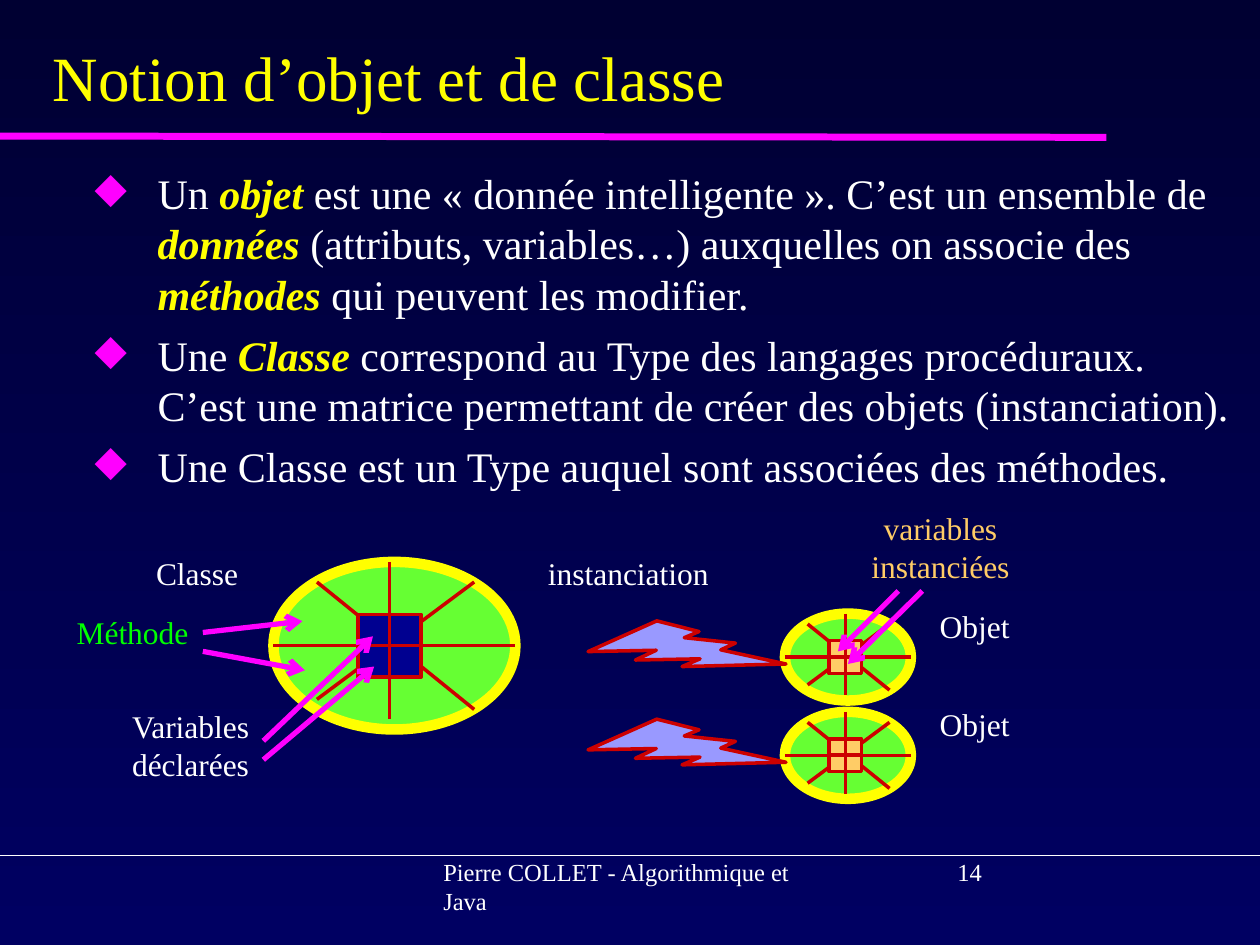
from pptx import Presentation
from pptx.dml.color import RGBColor
from pptx.enum.shapes import MSO_CONNECTOR, MSO_SHAPE
from pptx.enum.text import MSO_ANCHOR, PP_ALIGN
from pptx.oxml.ns import qn
from pptx.util import Inches, Pt
from lxml.etree import SubElement

WHITE, YELLOW, PINK, RED = "FFFFFF", "FFFF00", "FF00FF", "CC0000"
GREEN, LIME, NAVY, PEACH, LILAC = "66FF33", "00FF00", "000090", "FFCC66", "9999FF"
FONT = "Times New Roman"

# Text between stars is stressed
POINTS = [
    "Un *objet* est une «\u00a0donnée intelligente\u00a0». C’est un ensemble de "
    "*données *(attributs, variables…) auxquelles on associe des *méthodes* "
    "qui peuvent les modifier.",
    "Une *Classe *correspond au Type des langages procéduraux. "
    "C’est une matrice permettant de créer des objets (instanciation).",
    "Une Classe est un Type auquel sont associées des méthodes.",
]


def paint(color, code):
    color.rgb = RGBColor.from_string(code)


def style(run, size, code, stress=False):
    font = run.font
    font.name, font.size = FONT, Pt(size)
    font.bold = font.italic = stress
    paint(font.color, code)


def add_box(slide, box, wrap=True, inset=True):
    frame = slide.shapes.add_textbox(*map(Inches, box)).text_frame
    frame.word_wrap = wrap
    if not inset:
        frame.margin_left = frame.margin_right = 0
        frame.margin_top = frame.margin_bottom = 0
    return frame


def add_text(slide, box, text, size=18, code=WHITE, align=PP_ALIGN.LEFT, **kind):
    frame = add_box(slide, box, **kind)
    frame.text = text
    for para in frame.paragraphs:
        para.alignment = align
        for run in para.runs:
            style(run, size, code)
    return frame


def add_points(slide, box):
    frame = add_box(slide, box, inset=False)
    for i, point in enumerate(POINTS):
        para = frame.add_paragraph() if i else frame.paragraphs[0]
        props = para._p.get_or_add_pPr()
        props.set("marL", str(Inches(0.5)))
        props.set("indent", str(-Inches(0.5)))
        tint = SubElement(props, qn("a:buClr"))
        SubElement(tint, qn("a:srgbClr"), val=PINK)
        SubElement(props, qn("a:buChar"), char="◆")
        para.space_before = Pt(6 if i else 0)
        for j, part in enumerate(point.split("*")):
            run = para.add_run()
            run.text = part
            stress = j % 2 == 1
            style(run, 24, YELLOW if stress else WHITE, stress)


def add_line(slide, start, end, code, width, arrow=False):
    line = slide.shapes.add_connector(
        MSO_CONNECTOR.STRAIGHT, *map(Inches, (*start, *end)))
    paint(line.line.color, code)
    line.line.width = Pt(width)
    if arrow:
        SubElement(line.line._get_or_add_ln(), qn("a:tailEnd"), type="arrow")
    SubElement(line._element.spPr, qn("a:effectLst"))


def add_shape(slide, kind, box, fill, edge, width):
    shape = slide.shapes.add_shape(kind, *map(Inches, box))
    shape.shadow.inherit = False
    shape.fill.solid()
    paint(shape.fill.fore_color, fill)
    paint(shape.line.color, edge)
    shape.line.width = Pt(width)
    return shape


def add_cell(slide, left, top, wide, high, core):
    """Oval with four spokes, and a core of two by two squares."""
    def spot(x, y):
        return left + x * wide, top + y * high

    add_shape(slide, MSO_SHAPE.OVAL, (left, top, wide, high), GREEN, YELLOW, 6)
    mid = 0.48
    for start, end in (((mid, 0), (mid, 0.94)), ((0.18, 0.82), (0.83, 0.12)),
                       ((0, 0.5), (1, 0.5)), ((0.18, 0.12), (0.83, 0.88))):
        add_line(slide, spot(*start), spot(*end), RED, 2)
    side = 0.13 * wide
    x, y = spot(mid, 0.5)
    for row in (-1, 0):
        for col in (-1, 0):
            box = (x + col * side, y + row * side, side, side)
            add_shape(slide, MSO_SHAPE.RECTANGLE, box, core, RED, 2)


def add_frame(slide):
    fill = slide.background.fill
    fill.gradient()
    fill.gradient_angle = 270
    for stop, place, code in zip(fill.gradient_stops, (0, 1), ("000032", "000062")):
        stop.position = place
        paint(stop.color, code)
    add_line(slide, (0, 6.79), (10, 6.79), WHITE, 0.75)
    add_line(slide, (0, 1.08), (8.78, 1.09), PINK, 4)
    add_text(slide, (3.42, 6.75, 3.16, 0.49), "Pierre COLLET - Algorithmique et Java", 14)
    add_text(slide, (7.5, 6.75, 2.08, 0.49), "14", 14)


def main():
    deck = Presentation()
    deck.slide_width, deck.slide_height = Inches(10), Inches(7.5)
    slide = deck.slides.add_slide(deck.slide_layouts[6])
    add_frame(slide)

    # Title and points
    title = add_text(slide, (0.42, 0.29, 9.42, 0.77), "Notion d’objet et de classe",
                     36, YELLOW, inset=False)
    title.vertical_anchor = MSO_ANCHOR.MIDDLE
    title.paragraphs[0].line_spacing = 0.74
    add_points(slide, (0.75, 1.33, 9.05, 5.33))

    # Class, and the two objects made from it
    add_cell(slide, 2.17, 4.46, 1.92, 1.33, NAVY)
    for top in (4.87, 5.65):
        add_cell(slide, 6.23, top, 1, 0.69, PEACH)
        bolt = add_shape(slide, MSO_SHAPE.LIGHTNING_BOLT, (4.69, top + 0.01, 1.5, 0.58),
                         LILAC, RED, 2)
        bolt.rotation = 346
        add_text(slide, (7.36, top - 0.1, 0.76, 0.4), "Objet", wrap=False)

    # Labels
    for box, text, code, align in (
            ((4.25, 4.35, 1.49, 0.4), "instanciation", WHITE, PP_ALIGN.LEFT),
            ((1.14, 4.35, 0.86, 0.4), "Classe", WHITE, PP_ALIGN.LEFT),
            ((0.51, 4.82, 1.1, 0.4), "Méthode", LIME, PP_ALIGN.LEFT),
            ((0.95, 5.56, 1.14, 0.71), "Variables\ndéclarées", WHITE, PP_ALIGN.LEFT),
            ((6.81, 3.99, 1.31, 0.71), "variables\ninstanciées", PEACH, PP_ALIGN.CENTER)):
        add_text(slide, box, text, 18, code, align, wrap=False)

    # Arrows from labels to parts
    for start, end in (((1.61, 5.02), (2.4, 4.93)), ((1.61, 5.17), (2.42, 5.32)),
                       ((2.09, 5.88), (2.96, 5.05)), ((2.09, 6.03), (2.97, 5.29)),
                       ((7.13, 4.69), (6.65, 5.17)), ((7.32, 4.69), (6.73, 5.27))):
        add_line(slide, start, end, PINK, 3, arrow=True)

    deck.save("out.pptx")


if __name__ == "__main__":
    main()
